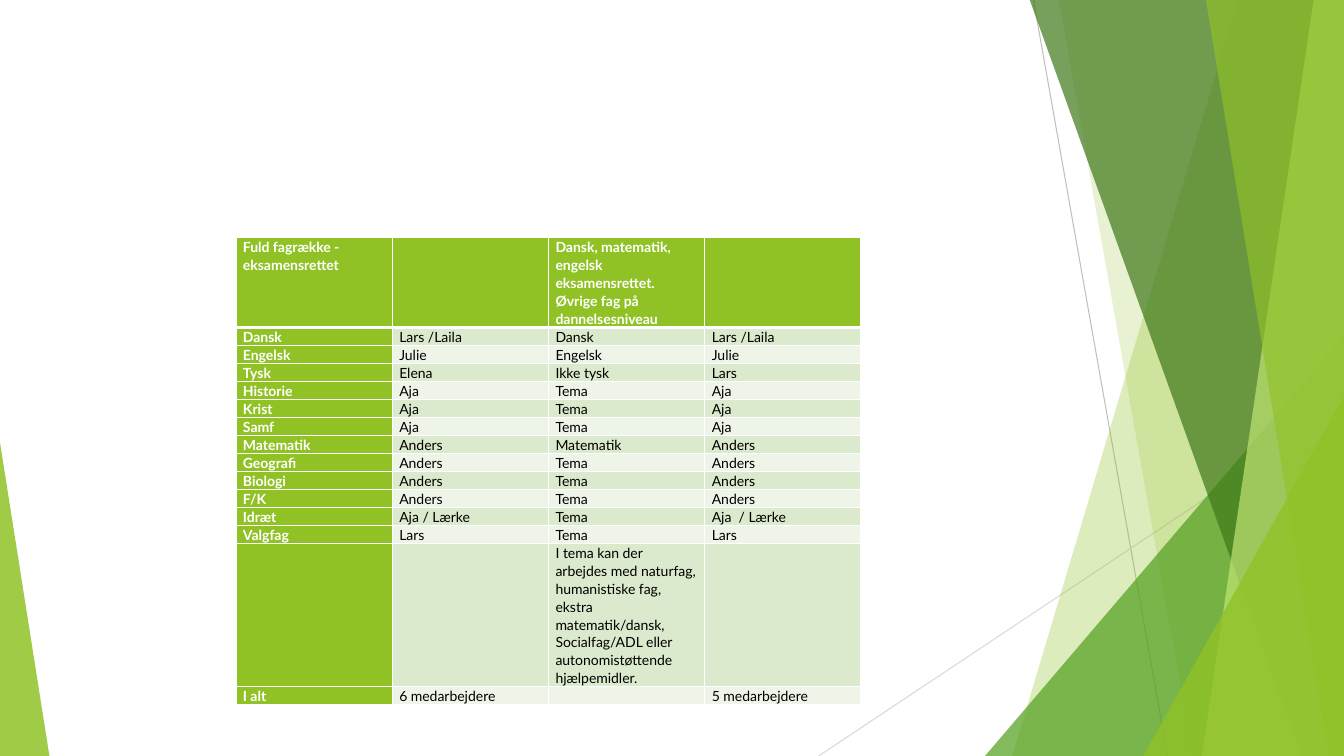
from dataclasses import dataclass

from lxml import etree
from pptx import Presentation
from pptx.dml.color import RGBColor
from pptx.enum.shapes import MSO_CONNECTOR, MSO_SHAPE
from pptx.oxml import parse_xml
from pptx.oxml.ns import nsdecls, qn
from pptx.util import Inches, Pt

STRAIGHT = MSO_CONNECTOR.STRAIGHT
TRIANGLE = MSO_SHAPE.ISOSCELES_TRIANGLE


@dataclass(frozen=True)
class Theme:
    font: str = "Lato"
    size: int = 10
    green: str = "90C226"
    mid_green: str = "54A021"
    dark_green: str = "3F7819"
    pale_green: str = "C0E474"
    band_dark: str = "DBE9CD"
    band_light: str = "EEF4E8"
    white: str = "FFFFFF"
    black: str = "000000"
    ray_dark: str = "BFBFBF"
    ray_light: str = "D9D9D9"


@dataclass(frozen=True)
class Box:
    left: float
    top: float
    width: float
    height: float


THEME = Theme()
PAGE = Box(0, 0, 13.33, 7.5)
STAFFING_BOX = Box(2.34, 2.36, 6.2, 4.74)
HEADER_HEIGHT, LINE_HEIGHT, NOTE_HEIGHT = 0.72, 0.17, 1.27

STAFFING = [
    ("Fuld fagrække - eksamensrettet", "",
     "Dansk, matematik, engelsk eksamensrettet. Øvrige fag på dannelsesniveau", ""),
    ("Dansk", "Lars /Laila", "Dansk", "Lars /Laila"),
    ("Engelsk", "Julie", "Engelsk", "Julie"),
    ("Tysk", "Elena", "Ikke tysk", "Lars"),
    ("Historie", "Aja", "Tema", "Aja"),
    ("Krist", "Aja", "Tema", "Aja"),
    ("Samf", "Aja", "Tema", "Aja"),
    ("Matematik", "Anders", "Matematik", "Anders"),
    ("Geografi", "Anders", "Tema", "Anders"),
    ("Biologi", "Anders", "Tema", "Anders"),
    ("F/K", "Anders", "Tema", "Anders"),
    ("Idræt", "Aja / Lærke", "Tema", "Aja  / Lærke"),
    ("Valgfag", "Lars", "Tema", "Lars"),
    ("", "", "I tema kan der arbejdes med naturfag, humanistiske fag, ekstra "
     "matematik/dansk, Socialfag/ADL eller autonomistøttende hjælpemidler.", ""),
    ("I alt", "6 medarbejdere", "", "5 medarbejdere"),
]
NOTE_ROW = 13


def paint(shape, color, opacity):
    """Give a shape a translucent fill (opacity in percent), no line and no shadow."""
    shape.shadow.inherit = False
    shape.line.fill.background()
    shape.fill.solid()
    shape.fill.fore_color.rgb = RGBColor.from_string(color)
    tint = shape.fill._xPr.find(qn("a:solidFill"))[0]
    etree.SubElement(tint, qn("a:alpha")).set("val", str(opacity * 1000))


def add_ray(slide, box, start, end, color):
    ray = slide.shapes.add_connector(
        STRAIGHT, Inches(box.left + start[0]), Inches(box.top + start[1]),
        Inches(box.left + end[0]), Inches(box.top + end[1]))
    ray.line.color.rgb = RGBColor.from_string(color)
    ray.line.width = Pt(0.75)
    etree.SubElement(ray._element.spPr, qn("a:effectLst"))


def add_band(slide, box, top_left, bottom_left, color, opacity):
    """Draw a full-height band from a slanted left edge to the box's right edge."""
    top, bottom = Inches(box.top - 0.01), Inches(box.top + box.height)
    right = Inches(box.left + box.width)
    outline = slide.shapes.build_freeform(Inches(box.left + top_left), top)
    outline.add_line_segments(
        [(right, top), (right, bottom), (Inches(box.left + bottom_left), bottom)])
    paint(outline.convert_to_shape(), color, opacity)


def add_corner(slide, box, width, height, at_right, color, opacity):
    """Draw a right triangle standing in a bottom corner of the box."""
    left = box.left + (box.width - width if at_right else 0)
    corner = slide.shapes.add_shape(
        TRIANGLE, Inches(left), Inches(box.top + box.height - height),
        Inches(width), Inches(height))
    corner.adjustments[0] = 1 if at_right else 0
    paint(corner, color, opacity)


def add_facets(slide, box):
    add_ray(slide, box, (10.25, 0), (11.58, box.height), THEME.ray_dark)
    add_ray(slide, box, (box.width, 4.03), (8.12, box.height), THEME.ray_light)
    add_band(slide, box, 12.28, 10.04, THEME.green, 30)
    add_band(slide, box, 10.5, 11.83, THEME.green, 20)
    add_corner(slide, box, 3.56, 4.17, True, THEME.mid_green, 72)
    add_band(slide, box, 10.21, 12.91, THEME.dark_green, 70)
    add_band(slide, box, 13.03, 11.92, THEME.pale_green, 70)
    add_band(slide, box, 11.96, 13.18, THEME.green, 65)
    add_corner(slide, box, 1.99, 3.57, True, THEME.green, 80)
    add_corner(slide, box, 0.49, 3.11, False, THEME.green, 85)


def set_borders(cell, top, bottom):
    """Draw white cell borders; top and bottom widths are in points."""
    properties = cell._tc.get_or_add_tcPr()
    sides = (("lnL", 1), ("lnR", 1), ("lnT", top), ("lnB", bottom))
    for position, (side, width) in enumerate(sides):
        properties.insert(position, parse_xml(
            f'<a:{side} {nsdecls("a")} w="{Pt(width)}"><a:solidFill>'
            f'<a:srgbClr val="{THEME.white}"/></a:solidFill></a:{side}>'))


def fill_cell(cell, text, row, column):
    heading = row == 0 or column == 0
    band = THEME.band_dark if row % 2 else THEME.band_light
    cell.fill.solid()
    cell.fill.fore_color.rgb = RGBColor.from_string(THEME.green if heading else band)
    cell.margin_left = cell.margin_right = Inches(0.07)
    cell.margin_top = cell.margin_bottom = 0
    set_borders(cell, 3 if row == 1 else 1, 3 if row == 0 else 1)

    cell.text_frame.text = text
    paragraph = cell.text_frame.paragraphs[0]
    paragraph.line_spacing = 1.07
    paragraph.space_after = Pt(8)
    for run in paragraph.runs:
        run.font.name = THEME.font
        run.font.size = Pt(THEME.size)
        run.font.bold = heading
        run.font.color.rgb = RGBColor.from_string(THEME.white if heading else THEME.black)
    if not text:
        end = etree.SubElement(paragraph._p, qn("a:endParaRPr"))
        end.set("sz", str(THEME.size * 100))


def add_staffing_table(slide, box):
    columns = len(STAFFING[0])
    table = slide.shapes.add_table(
        len(STAFFING), columns, Inches(box.left), Inches(box.top),
        Inches(box.width), Inches(box.height)).table
    table.first_col = True
    for column in table.columns:
        column.width = Inches(box.width / columns)
    heights = {0: HEADER_HEIGHT, NOTE_ROW: NOTE_HEIGHT}
    for row, texts in enumerate(STAFFING):
        table.rows[row].height = Inches(heights.get(row, LINE_HEIGHT))
        for column, text in enumerate(texts):
            fill_cell(table.cell(row, column), text, row, column)


def main():
    deck = Presentation()
    deck.slide_width, deck.slide_height = Inches(PAGE.width), Inches(PAGE.height)
    slide = deck.slides.add_slide(deck.slide_layouts[6])
    add_facets(slide, PAGE)
    add_staffing_table(slide, STAFFING_BOX)
    deck.save("out.pptx")


if __name__ == "__main__":
    main()
